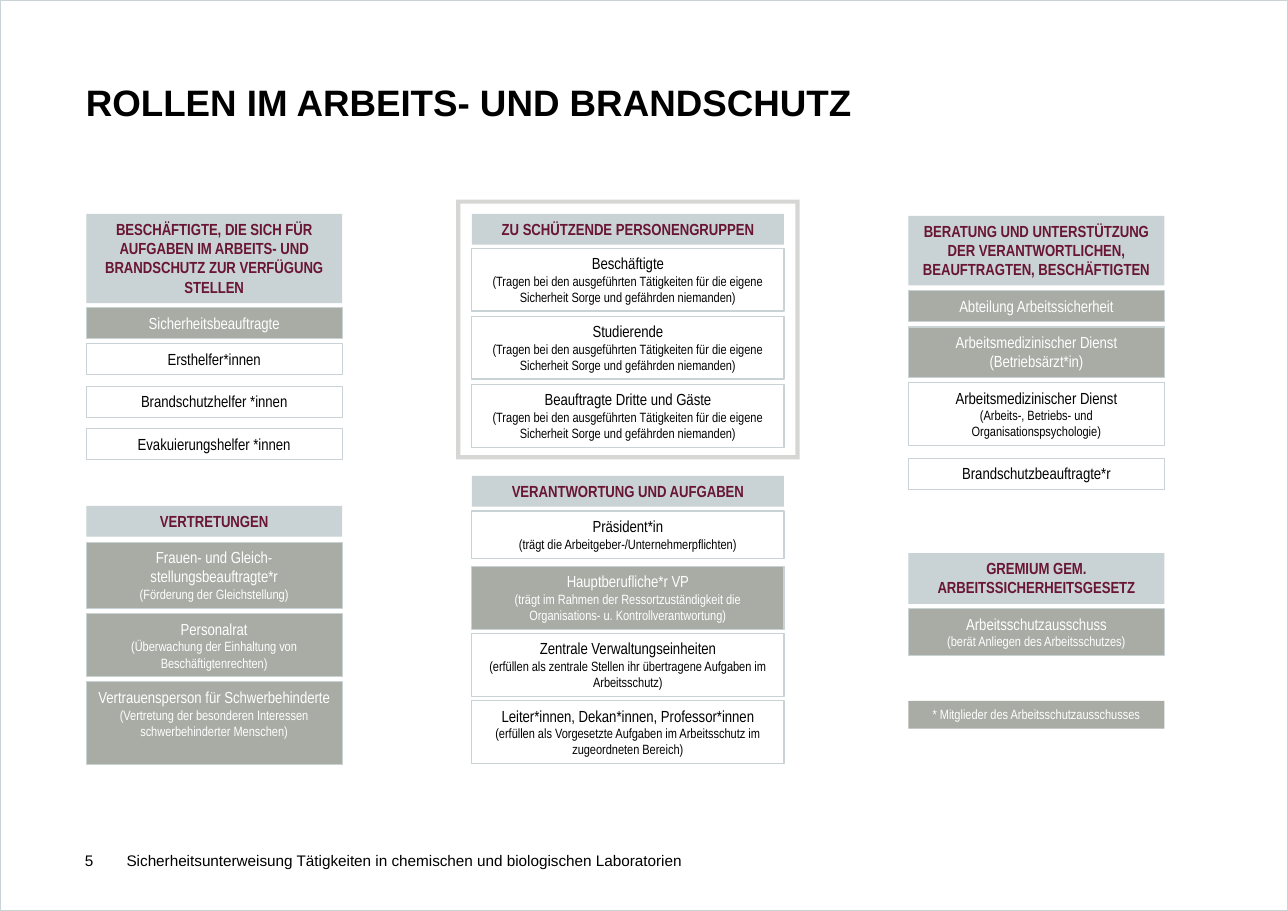
from pptx import Presentation
from pptx.dml.color import RGBColor
from pptx.enum.shapes import MSO_SHAPE
from pptx.enum.text import MSO_ANCHOR, PP_ALIGN
from pptx.util import Cm, Pt

RECT, FRAME = MSO_SHAPE.RECTANGLE, MSO_SHAPE.FRAME
TOP, MIDDLE = MSO_ANCHOR.TOP, MSO_ANCHOR.MIDDLE
LEFT, CENTER = PP_ALIGN.LEFT, PP_ALIGN.CENTER

BLACK = RGBColor(0x00, 0x00, 0x00)
WHITE = RGBColor(0xFF, 0xFF, 0xFF)
WINE = RGBColor(0x69, 0x16, 0x33)
PALE = RGBColor(0xC9, 0xD2, 0xD5)
GRAY = RGBColor(0xA8, 0xAC, 0xA5)
LIGHT = RGBColor(0xD6, 0xD7, 0xD4)

BIG, SMALL = 10.5, 8.8

# style: fill, line, text colour, bold, size of the first paragraph
HEAD = (PALE, None, WINE, True, BIG)
DARK = (GRAY, PALE, WHITE, False, BIG)
OPEN = (None, PALE, BLACK, False, BIG)
NOTE = (GRAY, None, WHITE, False, SMALL)

CARE = ("(Tragen bei den ausgeführten Tätigkeiten für die eigene "
        "Sicherheit Sorge und gefährden niemanden)")

# column: left, width, boxes as (top, height, style, paragraphs)
COLUMNS = [
    (1.99, 5.9, [
        (4.93, 2.06, HEAD, ["BESCHÄFTIGTE, DIE SICH FÜR AUFGABEN IM ARBEITS- UND "
                            "BRANDSCHUTZ ZUR VERFÜGUNG STELLEN"]),
        (7.09, 0.71, DARK, ["Sicherheitsbeauftragte"]),
        (7.92, 0.71, OPEN, ["Ersthelfer*innen"]),
        (8.91, 0.71, OPEN, ["Brandschutzhelfer *innen"]),
        (9.88, 0.71, OPEN, ["Evakuierungshelfer *innen"]),
        (11.66, 0.71, HEAD, ["VERTRETUNGEN"]),
        (12.5, 1.52, DARK, ["Frauen- und Gleich-stellungsbeauftragte*r",
                            "(Förderung der Gleichstellung)"]),
        (14.15, 1.45, DARK, ["Personalrat",
                             "(Überwachung der Einhaltung von Beschäftigtenrechten)"]),
        (15.72, 1.91, DARK, ["Vertrauensperson für Schwerbehinderte",
                             "(Vertretung der besonderen Interessen "
                             "schwerbehinderter Menschen)"]),
    ]),
    (10.88, 7.2, [
        (4.93, 0.71, HEAD, ["ZU SCHÜTZENDE PERSONENGRUPPEN"]),
        (5.72, 1.45, OPEN, ["Beschäftigte", CARE]),
        (7.29, 1.45, OPEN, ["Studierende", CARE]),
        (8.86, 1.45, OPEN, ["Beauftragte Dritte und Gäste", CARE]),
        (10.97, 0.71, HEAD, ["VERANTWORTUNG UND AUFGABEN"]),
        (11.78, 1.09, OPEN, ["Präsident*in",
                             "(trägt die Arbeitgeber-/Unternehmerpflichten)"]),
        (13.06, 1.45, DARK, ["Hauptberufliche*r VP",
                             "(trägt im Rahmen der Ressortzuständigkeit die "
                             "Organisations- u. Kontrollverantwortung)"]),
        (14.6, 1.45, OPEN, ["Zentrale Verwaltungseinheiten",
                            "(erfüllen als zentrale Stellen ihr übertragene "
                            "Aufgaben im Arbeitsschutz)"]),
        (16.15, 1.45, OPEN, ["Leiter*innen, Dekan*innen, Professor*innen",
                             "(erfüllen als Vorgesetzte Aufgaben im Arbeitsschutz "
                             "im zugeordneten Bereich)"]),
    ]),
    (20.95, 5.9, [
        (4.98, 1.6, HEAD, ["BERATUNG UND UNTERSTÜTZUNG DER VERANTWORTLICHEN, "
                           "BEAUFTRAGTEN, BESCHÄFTIGTEN"]),
        (6.7, 0.71, DARK, ["Abteilung Arbeitssicherheit"]),
        (7.54, 1.17, DARK, ["Arbeitsmedizinischer Dienst (Betriebsärzt*in)"]),
        (8.82, 1.45, OPEN, ["Arbeitsmedizinischer Dienst",
                            "(Arbeits-, Betriebs- und Organisationspsychologie)"]),
        (10.57, 0.71, OPEN, ["Brandschutzbeauftragte*r"]),
        (12.75, 1.17, HEAD, ["GREMIUM GEM. ARBEITSSICHERHEITSGESETZ"]),
        (14.03, 1.09, DARK, ["Arbeitsschutzausschuss",
                             "(berät Anliegen des Arbeitsschutzes)"]),
        (16.16, 0.64, NOTE, ["* Mitglieder des Arbeitsschutzausschusses"]),
    ]),
]


def place(shape, x, y, w, h):
    shape.left, shape.top, shape.width, shape.height = Cm(x), Cm(y), Cm(w), Cm(h)


def write(para, text, face, size, color, bold=False, align=LEFT):
    para.text = text
    para.alignment = align
    font = para.font
    font.name, font.size, font.bold = face, Pt(size), bold
    font.color.rgb = color


def add_form(slide, kind, x, y, w, h, fill=None, line=None, width=0.75):
    shape = slide.shapes.add_shape(kind, Cm(x), Cm(y), Cm(w), Cm(h))
    shape.shadow.inherit = False
    if fill is None:
        shape.fill.background()
    else:
        shape.fill.solid()
        shape.fill.fore_color.rgb = fill
    if line is None:
        shape.line.fill.background()
    else:
        shape.line.color.rgb = line
        shape.line.width = Pt(width)
    return shape


def add_box(slide, x, y, w, h, style, texts):
    fill, line, color, bold, size = style
    frame = add_form(slide, RECT, x, y, w, h, fill, line).text_frame
    frame.word_wrap = True
    frame.vertical_anchor = TOP
    for i, text in enumerate(texts):
        para = frame.add_paragraph() if i else frame.paragraphs[0]
        write(para, text, "Arial Narrow", SMALL if i else size, color, bold, CENTER)


def set_title(slide, text):
    title = slide.shapes.title
    place(title, 1.98, 1.96, 25.86, 3.38)
    frame = title.text_frame
    frame.word_wrap = True
    frame.vertical_anchor = TOP
    frame.margin_left = frame.margin_right = frame.margin_top = frame.margin_bottom = 0
    para = frame.paragraphs[0]
    write(para, text, "Arial", 24, BLACK, True)
    para.line_spacing = 0.9


def add_foot(slide, x, w, text):
    frame = slide.shapes.add_textbox(Cm(x), Cm(19.33), Cm(w), Cm(1.02)).text_frame
    frame.word_wrap = True
    frame.vertical_anchor = MIDDLE
    frame.margin_left = frame.margin_right = 0
    write(frame.paragraphs[0], text, "Arial", 10, BLACK)


def main():
    deck = Presentation()
    deck.slide_width, deck.slide_height = Cm(29.7), Cm(21)
    slide = deck.slides.add_slide(deck.slide_layouts[5])

    add_form(slide, RECT, 0, 0, 29.7, 21, line=PALE, width=1)
    set_title(slide, "ROLLEN IM ARBEITS- UND BRANDSCHUTZ")
    add_foot(slide, 1.96, 0.79, "5")
    add_foot(slide, 2.92, 18.92, "Sicherheitsunterweisung Tätigkeiten in chemischen "
                                 "und biologischen Laboratorien")

    ring = add_form(slide, FRAME, 10.52, 4.6, 7.92, 5.99, LIGHT)
    ring.adjustments[0] = 0.016
    for x, w, boxes in COLUMNS:
        for y, h, style, texts in boxes:
            add_box(slide, x, y, w, h, style, texts)

    deck.save("out.pptx")


if __name__ == "__main__":
    main()
